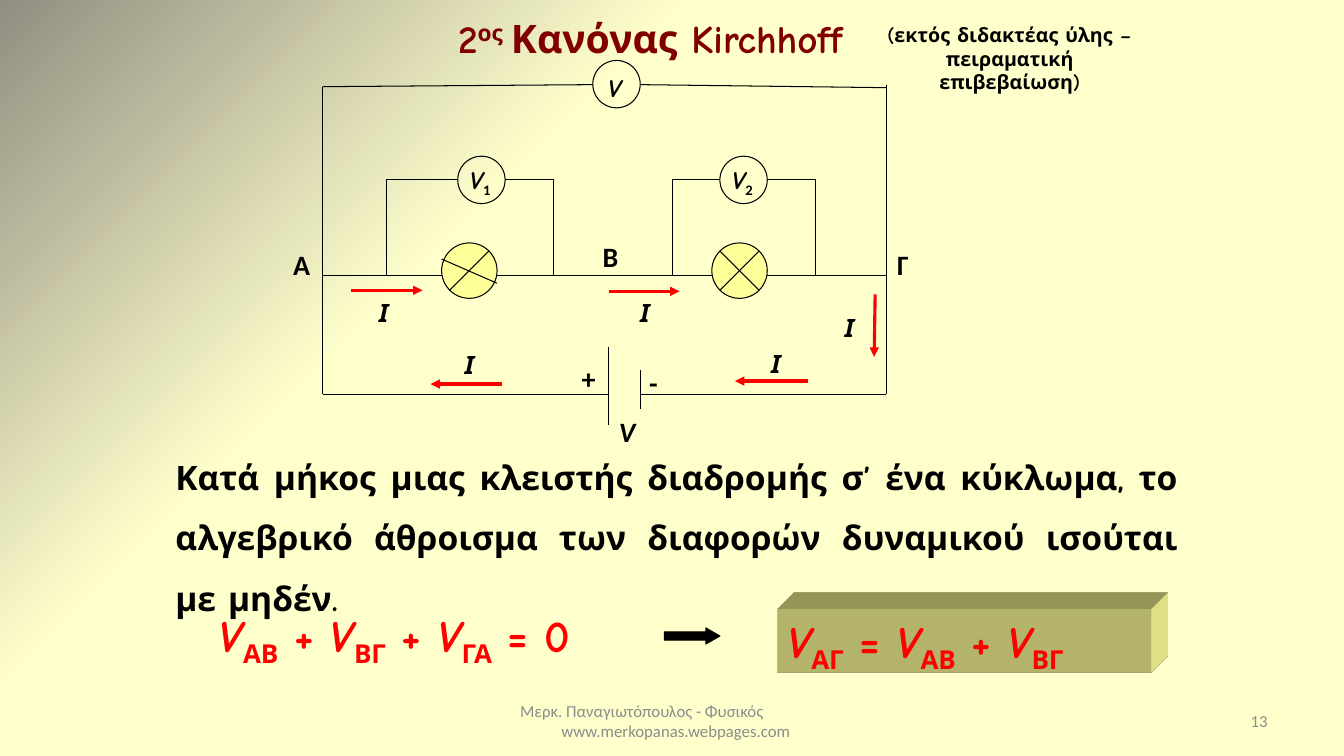
from lxml.etree import SubElement
from pptx import Presentation
from pptx.dml.color import RGBColor
from pptx.enum.shapes import MSO_CONNECTOR as LINK, MSO_SHAPE as SHAPE
from pptx.enum.text import MSO_ANCHOR as ANCHOR, PP_ALIGN as ALIGN
from pptx.oxml import parse_xml
from pptx.oxml.ns import qn
from pptx.util import Pt

PX = 9144
BLACK = RGBColor(0, 0, 0)
RED = RGBColor(255, 0, 0)
MAROON = RGBColor(128, 0, 0)
GRAY = RGBColor(0x8C, 0x8C, 0x8C)
YELLOW = RGBColor(255, 255, 0x99)
COMIC, PLAIN = "Comic Neue", "Calibri"
NS = 'xmlns:a="http://schemas.openxmlformats.org/drawingml/2006/main"'
PNS = 'xmlns:p="http://schemas.openxmlformats.org/presentationml/2006/main"'
BACK = f"""<p:bg {NS} {PNS}><p:bgPr><a:gradFill rotWithShape="1"><a:gsLst>
<a:gs pos="0"><a:srgbClr val="FFFFCC"/></a:gs>
<a:gs pos="67000"><a:srgbClr val="FFFFCC"/></a:gs>
<a:gs pos="100000"><a:srgbClr val="918E81"/></a:gs></a:gsLst>
<a:path path="circle"><a:fillToRect l="100000" t="100000"/></a:path>
</a:gradFill><a:effectLst/></p:bgPr></p:bg>"""
SCENE = f"""<a:scene3d {NS}><a:camera prst="legacyObliqueTopRight"/>
<a:lightRig rig="legacyFlat3" dir="b"/></a:scene3d>"""
DEPTH = f"""<a:sp3d {NS} extrusionH="430200" prstMaterial="legacyMatte">
<a:bevelT w="13500" h="13500" prst="angle"/><a:bevelB w="13500" h="13500" prst="angle"/>
<a:extrusionClr><a:srgbClr val="FFFF99"/></a:extrusionClr></a:sp3d>"""


def scale(box):
    """Turn px lengths into EMU."""
    return [n * PX for n in box]


def write(frame, text, size=18, font=COMIC, color=BLACK, bold=True, slant=False,
          align=ALIGN.LEFT, anchor=ANCHOR.TOP, space=None, dents=(0,)):
    """Fill a frame with paragraphs, one per indent, made of (text, format) runs."""
    frame.word_wrap = True
    frame.vertical_anchor = anchor
    rows = text if len(dents) > 1 else [text]
    for i, (row, dent) in enumerate(zip(rows, dents)):
        para = frame.add_paragraph() if i else frame.paragraphs[0]
        para.alignment = align
        if space:
            para.line_spacing = space
        if dent:
            props = para._p.get_or_add_pPr()
            props.set("marL", str(dent * PX))
            props.set("indent", "0")
        for words, extra in [(row, {})] if isinstance(row, str) else row:
            run = para.add_run()
            run.text = words
            run.font.size = Pt(size)
            run.font.name = extra.get("font", font)
            run.font.bold = bold
            run.font.italic = extra.get("slant", slant)
            run.font.color.rgb = color
            if "base" in extra:
                run._r.get_or_add_rPr().set("baseline", str(extra["base"] * 1000))


def label(slide, box, text, **style):
    """Add a text box."""
    write(slide.shapes.add_textbox(*scale(box)).text_frame, text, **style)


def volt(mark, font=COMIC):
    """Give the runs of a V with a subscript."""
    return [("V", {"slant": True}), (mark, {"base": -25, "font": font})]


def chain(marks):
    """Join voltages with plus signs."""
    runs = volt(marks[0])
    for mark in marks[1:]:
        runs += [(" + ", {})] + volt(mark)
    return runs


def wire(slide, *points, color=BLACK, width=0.75, arrow=False):
    """Join the points with straight lines."""
    for start, end in zip(points, points[1:]):
        line = slide.shapes.add_connector(LINK.STRAIGHT, *scale(start + end))
        line.line.color.rgb = color
        line.line.width = Pt(width)
        if arrow:
            SubElement(line.line._get_or_add_ln(), qn("a:tailEnd"), type="triangle")
        SubElement(line._element.spPr, qn("a:effectLst"))


def solid(slide, kind, box, fill=None, edge=BLACK):
    """Add a preset shape."""
    shape = slide.shapes.add_shape(kind, *scale(box))
    shape.shadow.inherit = False
    if fill is None:
        shape.fill.background()
    else:
        shape.fill.solid()
        shape.fill.fore_color.rgb = fill
    if edge is None:
        shape.line.fill.background()
    else:
        shape.line.color.rgb = edge
        shape.line.width = Pt(0.75)
    return shape


def meter(slide, left, x, mark):
    """Add a voltmeter at x, wired from left across one lamp."""
    label(slide, (x + 2, 158, 55, 40), volt(mark, PLAIN))
    solid(slide, SHAPE.OVAL, (x, 155, 47, 47))
    wire(slide, (left, 273), (left, 178), (x, 178))
    wire(slide, (x + 47, 178), (x + 95, 178), (x + 95, 273))


def lamp(slide, x, cross):
    """Add a lamp with its cross; the second stroke is given."""
    solid(slide, SHAPE.OVAL, (x, 241, 55, 55), YELLOW)
    wire(slide, (x + 47, 249), (x + 8, 288))
    wire(slide, *cross)


def flow(slide, start, end, box):
    """Add a current arrow with its letter."""
    wire(slide, start, end, color=RED, width=2.25, arrow=True)
    label(slide, box + (40, 40), "Ι", slant=True)


def main():
    """Build the slide."""
    deck = Presentation()
    deck.slide_width, deck.slide_height = scale((1333, 750))
    slide = deck.slides.add_slide(deck.slide_layouts[5])
    slide._element.cSld.insert(0, parse_xml(BACK))

    title = slide.shapes.title
    title.left, title.top, title.width, title.height = scale((407, 9, 476, 61))
    write(title.text_frame, [("2", {}), ("ος ", {"base": 30}), ("Κανόνας Kirchhoff", {})],
          size=28, color=MAROON, align=ALIGN.CENTER)
    label(slide, (870, 18, 263, 57), "(εκτός διδακτέας ύλης – πειραματική επιβεβαίωση)",
          size=14, align=ALIGN.CENTER)

    solid(slide, SHAPE.OVAL, (588, 60, 47, 47))
    label(slide, (593, 67, 42, 42), "V", slant=True)
    wire(slide, (320, 273), (320, 86), (588, 84))
    wire(slide, (635, 84), (879, 87))
    wire(slide, (879, 84), (879, 273))
    meter(slide, 383, 454, "1")
    meter(slide, 667, 714, "2")
    lamp(slide, 438, [(438, 257), (493, 281)])
    lamp(slide, 706, [(714, 249), (753, 288)])
    for left, right in (320, 438), (493, 706), (761, 879):
        wire(slide, (left, 273), (right, 273))

    wire(slide, (604, 344), (604, 422))
    wire(slide, (635, 367), (635, 406))
    wire(slide, (604, 391), (320, 391), (320, 273))
    wire(slide, (635, 391), (879, 391), (879, 273))
    for x, y, name in ((281, 241, "A"), (588, 233, "B"), (880, 241, "Γ"),
                       (567, 354, "+"), (634, 358, "-")):
        label(slide, (x, y, 40, 43), name, size=20, font=PLAIN)
    label(slide, (604, 406, 55, 43), "V", size=20, font=PLAIN, slant=True)

    for start, end, spot in (((348, 288), (419, 288), (366, 290)),
                             ((604, 289), (674, 289), (625, 290)),
                             ((868, 292), (867, 354), (828, 305)),
                             ((801, 378), (729, 378), (755, 341)),
                             ((498, 381), (427, 381), (451, 342))):
        flow(slide, start, end, spot)

    label(slide, (164, 428, 1014, 131),
          "Κατά μήκος μιας κλειστής διαδρομής σ’ ένα κύκλωμα, το αλγεβρικό άθροισμα "
          "των διαφορών δυναμικού ισούται με μηδέν.",
          size=24, align=ALIGN.JUSTIFY, space=1.5)
    label(slide, (163, 598, 457, 63), chain(["ΑΒ", "ΒΓ", "ΓΑ"]) + [(" = 0", {})],
          size=32, color=RED, align=ALIGN.CENTER)
    arrow = solid(slide, SHAPE.RIGHT_ARROW, (659, 623, 55, 16), BLACK)
    arrow.adjustments[1] = 0.87
    result = solid(slide, SHAPE.RECTANGLE, (771, 604, 370, 63), YELLOW, None)
    for part in SCENE, DEPTH:
        result._element.spPr.append(parse_xml(part))
    write(result.text_frame, volt("ΑΓ") + [(" = ", {})] + chain(["ΑΒ", "ΒΓ"]),
          size=32, color=RED)

    small = dict(size=12, font=PLAIN, color=GRAY, bold=False, anchor=ANCHOR.MIDDLE)
    label(slide, (456, 695, 422, 40),
          ["Μερκ. Παναγιωτόπουλος - Φυσικός", "www.merkopanas.webpages.com"],
          dents=(50, 91), **small)
    label(slide, (956, 695, 311, 40), "13", align=ALIGN.RIGHT, **small)
    deck.save("out.pptx")


if __name__ == "__main__":
    main()
